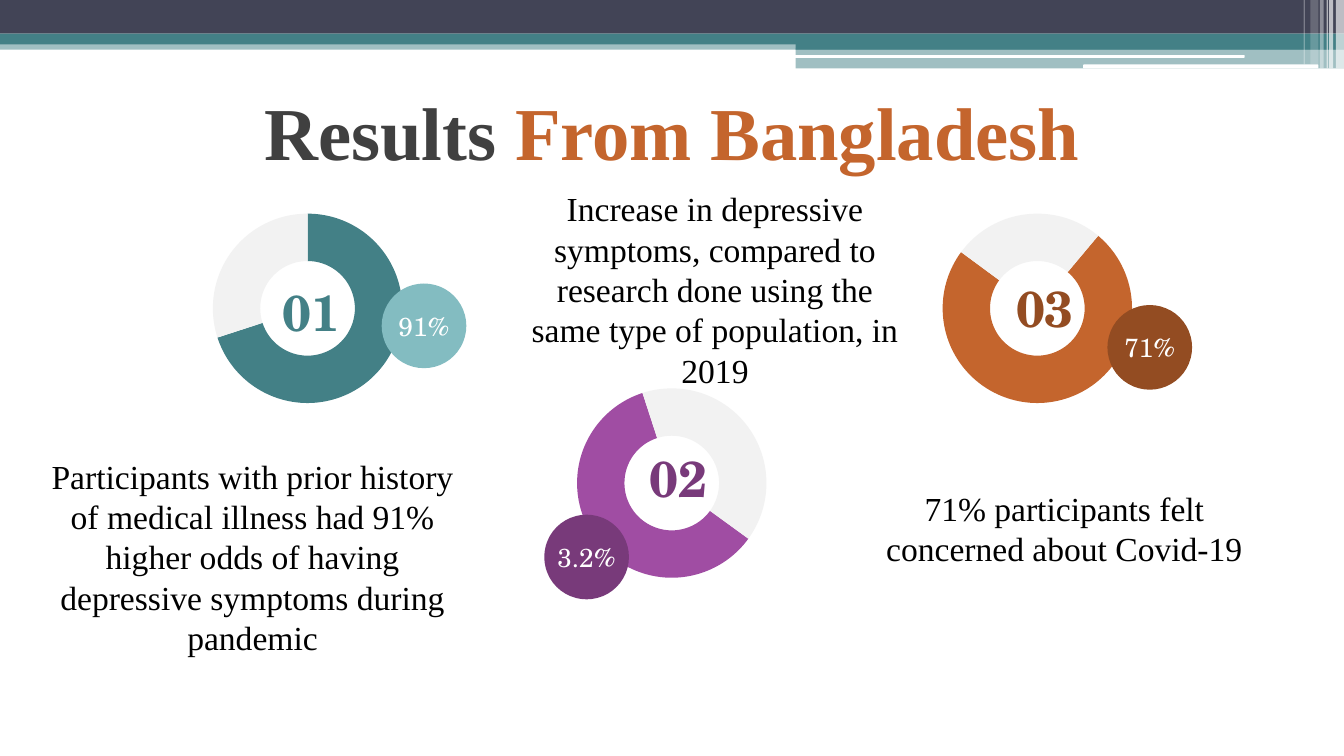
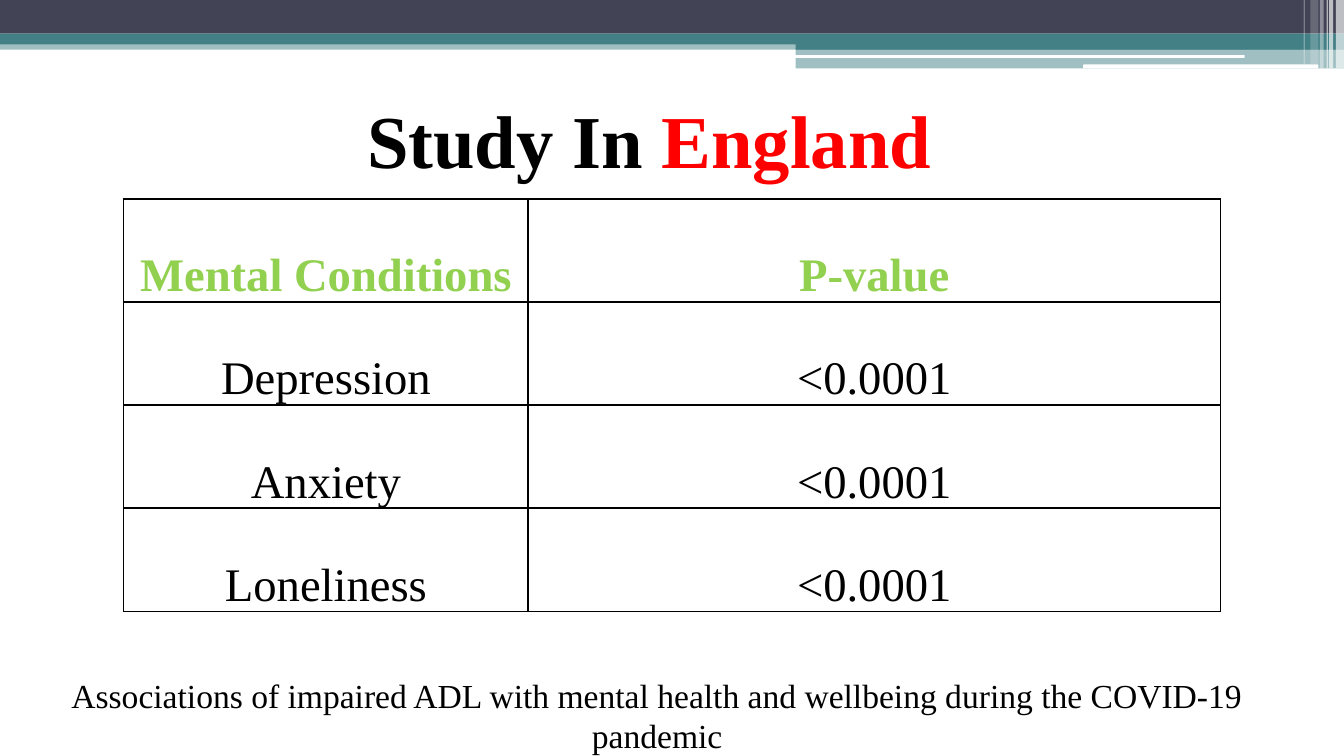
from lxml import etree
from pptx import Presentation
from pptx.chart.data import CategoryChartData
from pptx.dml.color import RGBColor
from pptx.enum.chart import XL_CHART_TYPE
from pptx.enum.shapes import MSO_SHAPE
from pptx.enum.text import MSO_ANCHOR, MSO_AUTO_SIZE, PP_ALIGN
from pptx.oxml import parse_xml
from pptx.oxml.ns import nsdecls, qn
from pptx.util import Inches, Pt

RECTANGLE, ROUNDED, ELLIPSE = MSO_SHAPE.RECTANGLE, MSO_SHAPE.ROUNDED_RECTANGLE, MSO_SHAPE.OVAL
DOUGHNUT = XL_CHART_TYPE.DOUGHNUT
MIDDLE, TOP = MSO_ANCHOR.MIDDLE, MSO_ANCHOR.TOP
GROW, FIXED = MSO_AUTO_SIZE.SHAPE_TO_FIT_TEXT, MSO_AUTO_SIZE.NONE
CENTER = PP_ALIGN.CENTER

SERIF, SCHOLA = "Times New Roman", "TeX Gyre Schola"
BLACK, WHITE, GRAY = "000000", "FFFFFF", "F2F2F2"
NAVY, TEAL, PALE_TEAL = "424456", "438086", "83BCC1"
PURPLE, DARK_PURPLE = "A04DA3", "783A7A"
ORANGE, BROWN = "C4652D", "934C22"
CHARCOAL, RED, GREEN = "404040", "FF0000", "92D050"

TITLE_FONT = {"name": SERIF, "size": Pt(40), "bold": True}
BODY_FONT = {"name": SERIF, "size": Pt(18), "bold": False}
BADGE_FONT = {"name": SCHOLA, "size": Pt(14), "bold": False}
NUMBER_FONT = {"name": SCHOLA, "size": Pt(27), "bold": True}
INSETS = {"margin_left": Inches(0.08), "margin_right": Inches(0.08),
          "margin_top": Inches(0.04), "margin_bottom": Inches(0.04)}
TITLE_FRAME = {**INSETS, "word_wrap": True, "vertical_anchor": MIDDLE, "auto_size": FIXED}
BODY_FRAME = {**INSETS, "word_wrap": True, "vertical_anchor": TOP, "auto_size": GROW}
NUMBER_FRAME = {**BODY_FRAME, "word_wrap": False, "vertical_anchor": MIDDLE}
BADGE_FRAME = {**TITLE_FRAME, "margin_left": 0, "margin_right": 0}

color = RGBColor.from_string
presentation = Presentation()
presentation.slide_width, presentation.slide_height = Inches(10), Inches(5.625)
column = row = presentation.slide_width / 100


def place(left, top, width, height):
    return [round(left * column), round(top * row), round(width * column), round(height * row)]


def write(text_frame, runs, font_format, frame_format):
    for name, value in frame_format.items():
        setattr(text_frame, name, value)
    paragraph = text_frame.paragraphs[0]
    paragraph.alignment = CENTER
    for text, hex_color in runs:
        run = paragraph.add_run()
        run.text = text
        run.font.color.rgb = color(hex_color)
        for name, value in font_format.items():
            setattr(run.font, name, value)
    return paragraph


layout = presentation.slide_layouts[5]
for placeholder in list(layout.placeholders)[1:]:
    layout.shapes.element.remove(placeholder.element)

titles = [
    ((5, 5.3, 90, 8.8), [("Results ", CHARCOAL), ("From Bangladesh", ORANGE)]),
    ((3.3, 5.9, 90, 8.8), [("Study In ", BLACK), ("England", RED)]),
]
for box, runs in titles:
    title = presentation.slides.add_slide(layout).shapes.title
    title.left, title.top, title.width, title.height = place(*box)
    write(title.text_frame, runs, TITLE_FONT, TITLE_FRAME)
results_slide, study_slide = presentation.slides

bands = [
    (RECTANGLE, (0, 3, 100, 0.7), TEAL, 50),
    (RECTANGLE, (0, 0, 100, 2.5), NAVY, 100),
    (RECTANGLE, (0, 2.5, 100, 0.8), TEAL, 100),
    (RECTANGLE, (59.2, 3, 40.8, 0.7), TEAL, 100),
    (RECTANGLE, (59.2, 3.6, 40.8, 1.5), TEAL, 50),
    (ROUNDED, (59.1, 4.1, 33.5, 0.2), WHITE, 100),
    (ROUNDED, (80.6, 4.8, 17.5, 0.3), WHITE, 100),
]
stripes = [(99.4, 0.6, 5.1, 65), (98.9, 0.3, 5.1, 65), (98.7, 0.1, 5.1, 60),
           (98.2, 0.3, 5.1, 40), (97.5, 0.6, 4.8, 20), (97, 0.1, 4.8, 30)]
bands += [(RECTANGLE, (left, 0, width, height), WHITE, opacity)
          for left, width, height, opacity in stripes]

band_shapes = []
for kind, box, hex_color, opacity in bands:
    shape = results_slide.shapes.add_shape(kind, *place(*box))
    shape.shadow.inherit = False
    shape.line.fill.background()
    shape.fill.solid()
    shape.fill.fore_color.rgb = color(hex_color)
    if opacity < 100:
        fill_color = shape.element.spPr.find(qn("a:solidFill")).find(qn("a:srgbClr"))
        etree.SubElement(fill_color, qn("a:alpha"), val=str(opacity * 1000))
    band_shapes.append(shape)
for shape in band_shapes:
    layout.shapes.element.append(shape.element)

rings = [
    ((10.2, 14.5), [70, 30], 0, TEAL),
    ((37.3, 27.5), [60, 40], 126, PURPLE),
    ((64.5, 14.5), [74, 26], 40, ORANGE),
]
ring_width, ring_height, ring_diameter = 25.4, 16.9, 14.1
width_share, height_share = ring_diameter / ring_width, ring_diameter / ring_height
for corner, values, start_angle, hex_color in rings:
    chart_data = CategoryChartData()
    chart_data.categories = ["1", "2"]
    chart_data.add_series("Series 1", values)
    chart = results_slide.shapes.add_chart(
        DOUGHNUT, *place(*corner, ring_width, ring_height), chart_data).chart
    chart.has_legend = chart.has_title = False
    chart.font.name, chart.font.size = SCHOLA, Pt(10)
    chart.font.color.rgb = color(BLACK)
    plot = chart.plots[0]
    plot.vary_by_categories = True
    for index, point_color in enumerate([hex_color, GRAY]):
        point_format = plot.series[0].points[index].format
        point_format.fill.solid()
        point_format.fill.fore_color.rgb = color(point_color)
        point_format.line.fill.background()
    plot_area = chart.element.find(".//" + qn("c:plotArea"))
    plot_area.find(".//" + qn("c:firstSliceAng")).set("val", str(start_angle))
    plot_area.find(".//" + qn("c:holeSize")).set("val", "75")
    for old_layout in plot_area.findall(qn("c:layout")):
        plot_area.remove(old_layout)
    plot_area.insert(0, parse_xml(
        f'<c:layout {nsdecls("c")}><c:manualLayout><c:layoutTarget val="inner"/>'
        '<c:xMode val="edge"/><c:yMode val="edge"/>'
        f'<c:x val="{(1 - width_share) / 2:.3f}"/><c:y val="{(1 - height_share) / 2:.3f}"/>'
        f'<c:w val="{width_share:.3f}"/><c:h val="{height_share:.3f}"/>'
        '</c:manualLayout></c:layout>'))

badges = [((28.4, 21.1), "91%", PALE_TEAL), ((40.5, 38.3), "3.2%", DARK_PURPLE),
          ((82.4, 22.7), "71%", BROWN)]
for corner, text, hex_color in badges:
    badge = results_slide.shapes.add_shape(ELLIPSE, *place(*corner, 6.3, 6.3))
    badge.shadow.inherit = False
    badge.line.fill.background()
    badge.fill.solid()
    badge.fill.fore_color.rgb = color(hex_color)
    write(badge.text_frame, [(text, WHITE)], BADGE_FONT, BADGE_FRAME)

numbers = [((20.2, 20.5, 6, 5.3), "01", TEAL), ((47.2, 32.9, 6.5, 5.3), "02", DARK_PURPLE),
           ((74.5, 20.2, 6.5, 5.3), "03", BROWN)]
for box, text, hex_color in numbers:
    number = results_slide.shapes.add_textbox(*place(*box))
    write(number.text_frame, [(text, hex_color)], NUMBER_FONT, NUMBER_FRAME)

findings = [
    ((2.1, 33.5, 33.4, 15.9), "Participants with prior history of medical illness had 91% "
     "higher odds of having depressive symptoms during pandemic"),
    ((38.1, 13.6, 30.2, 15.9), "Increase in depressive symptoms, compared to research done "
     "using the same type of population, in 2019"),
    ((62.7, 35.9, 33, 6.8), "71% participants felt concerned about Covid-19"),
]
for box, text in findings:
    finding = results_slide.shapes.add_textbox(*place(*box))
    write(finding.text_frame, [(text, BLACK)], BODY_FONT, BODY_FRAME)

conditions = [("Mental Conditions", "P-value"), ("Depression", "<0.0001"),
              ("Anxiety", "<0.0001"), ("Loneliness", "<0.0001")]
cell_frame = {"margin_left": Inches(0.05), "margin_right": Inches(0.05),
              "margin_top": 0, "margin_bottom": 0}
table = study_slide.shapes.add_table(4, 2, *place(9.2, 14.8, 81.6, 30)).table
table.first_row = table.horz_banding = False
for table_column, width in zip(table.columns, (30.1, 51.5)):
    table_column.width = round(width * column)
for row_index, texts in enumerate(conditions):
    is_header = row_index == 0
    cell_font = {"name": SERIF, "size": Pt(25), "bold": is_header}
    for column_index, text in enumerate(texts):
        cell = table.cell(row_index, column_index)
        for name, value in cell_frame.items():
            setattr(cell, name, value)
        paragraph = write(cell.text_frame, [(text, GREEN if is_header else BLACK)], cell_font, {})
        paragraph.line_spacing = 2.0
        cell_properties = cell._tc.get_or_add_tcPr()
        for side in ("lnL", "lnR", "lnT", "lnB"):
            cell_properties.append(parse_xml(
                f'<a:{side} {nsdecls("a")} w="{Pt(1)}"><a:solidFill>'
                f'<a:srgbClr val="{BLACK}"/></a:solidFill></a:{side}>'))
        cell.fill.background()

caption = study_slide.shapes.add_textbox(*place(2.5, 49.8, 92.8, 6.8))
caption_text = ("Associations of impaired ADL with mental health and wellbeing "
                "during the COVID-19 pandemic")
paragraph = write(caption.text_frame, [(caption_text, BLACK)], BODY_FONT, BODY_FRAME)
paragraph.space_after = Pt(7.5)

presentation.save("out.pptx")
